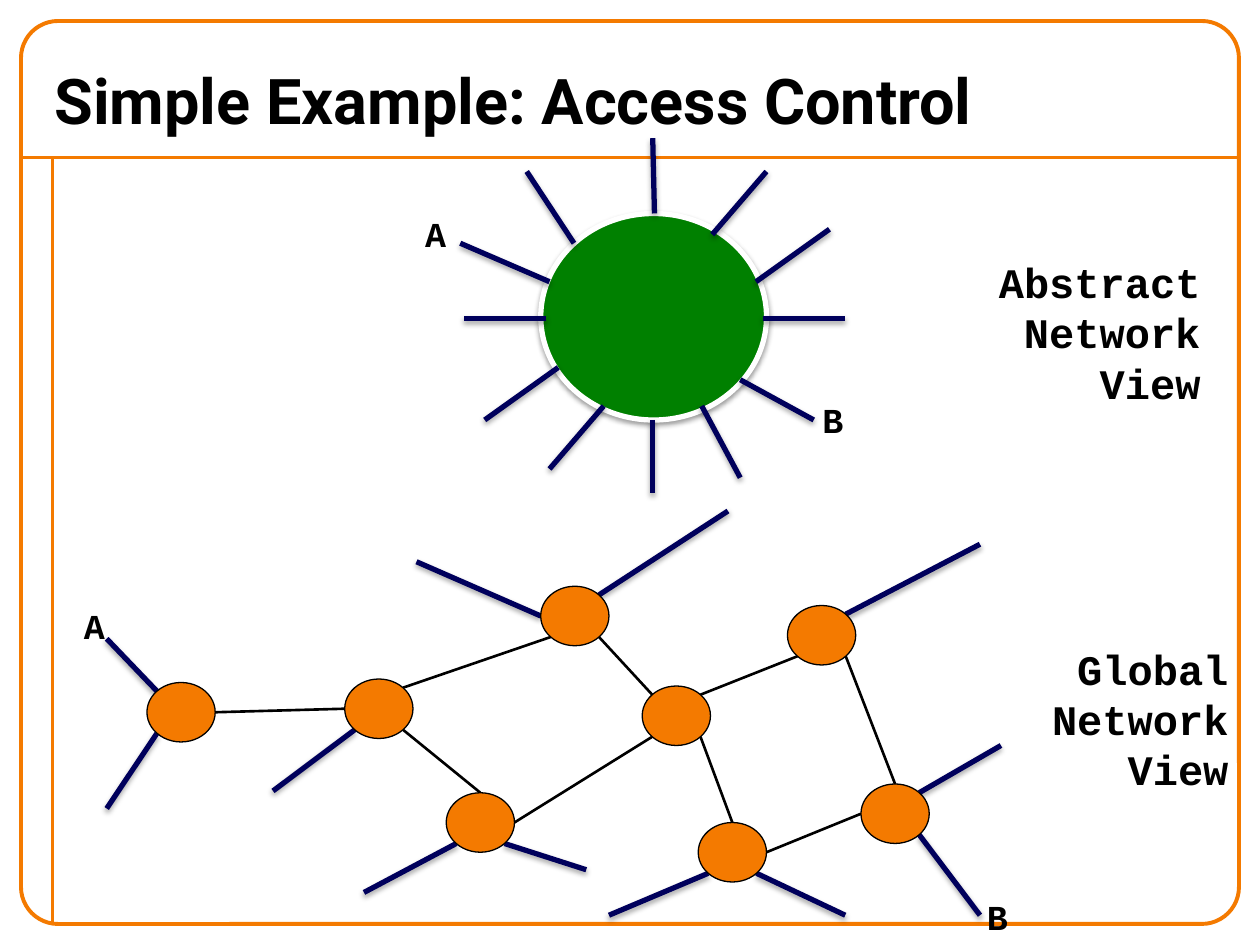
from dataclasses import dataclass
from math import cos, radians, sin

from lxml.etree import SubElement
from pptx import Presentation
from pptx.dml.color import RGBColor
from pptx.enum.shapes import MSO_CONNECTOR, MSO_SHAPE
from pptx.enum.text import MSO_ANCHOR, MSO_AUTO_SIZE, PP_ALIGN
from pptx.oxml.ns import qn
from pptx.util import Pt


@dataclass(frozen=True)
class Theme:
    orange: str = "F47A00"
    navy: str = "00005C"
    green: str = "008000"
    black: str = "000000"
    white: str = "FFFFFF"
    title_font: str = "Roboto"
    body_font: str = "Courier New"
    title_size: int = 36
    caption_size: int = 24
    label_size: int = 20


T = Theme()
NODE_W, NODE_H = 39, 34
LABEL_W, LABEL_H = 27, 32
ANGLES = {"E": 0, "SE": 45, "S": 90, "SW": 135,
          "W": 180, "NW": 225, "N": 270, "NE": 315}


def rgb(color):
    return RGBColor.from_string(color)


def add_effects(sp, shadow=None):
    """Replace theme effects with none, or with a soft shadow of given opacity."""
    effects = SubElement(sp._element.spPr, qn("a:effectLst"))
    if shadow:
        outer = SubElement(effects, qn("a:outerShdw"), blurRad=str(Pt(3.1)),
                           dist=str(Pt(1.7)), dir="5400000", rotWithShape="0")
        clr = SubElement(outer, qn("a:srgbClr"), val=T.black)
        SubElement(clr, qn("a:alpha"), val=str(shadow * 1000))


def add_line(shapes, start, end, color, width, shadow=None):
    sp = shapes.add_connector(MSO_CONNECTOR.STRAIGHT,
                              *(Pt(v) for v in (*start, *end)))
    sp.line.color.rgb = rgb(color)
    sp.line.width = Pt(width)
    add_effects(sp, shadow)


def add_host(shapes, start, end):
    add_line(shapes, start, end, T.navy, 3, shadow=35)


def add_box(shapes, kind, box, line, width, fill=None, shadow=None):
    sp = shapes.add_shape(kind, *(Pt(v) for v in box))
    if fill:
        sp.fill.solid()
        sp.fill.fore_color.rgb = rgb(fill)
    else:
        sp.fill.background()
    sp.line.color.rgb = rgb(line)
    sp.line.width = Pt(width)
    add_effects(sp, shadow)
    return sp


def write(tf, *lines, font=T.body_font, size=T.caption_size, align=PP_ALIGN.RIGHT):
    tf.word_wrap = True
    for i, line in enumerate(lines):
        p = tf.add_paragraph() if i else tf.paragraphs[0]
        p.alignment = align
        r = p.add_run()
        r.text = line
        r.font.name = font
        r.font.size = Pt(size)
        r.font.bold = True
        r.font.color.rgb = rgb(T.black)


def add_text(shapes, box, *lines, **fmt):
    tf = shapes.add_textbox(*(Pt(v) for v in box)).text_frame
    tf.auto_size = MSO_AUTO_SIZE.SHAPE_TO_FIT_TEXT
    write(tf, *lines, **fmt)


def add_label(shapes, point, text):
    add_text(shapes, (*point, LABEL_W, LABEL_H), text, size=T.label_size)


def build_frame(s, x, y, w, h):
    """Rounded border with a rule under the title and one down the left."""
    rule_y, rule_x = y + 78, x + 18
    add_line(s.shapes, (x, rule_y), (x + w, rule_y), T.orange, 2.25)
    add_line(s.shapes, (rule_x, rule_y), (rule_x, y + h), T.orange, 2.25)
    sp = add_box(s.shapes, MSO_SHAPE.ROUNDED_RECTANGLE, (x, y, w, h), T.orange, 2.25)
    sp.adjustments[0] = 0.041


def build_title(s, x, y, w, h):
    sp = s.shapes.title
    sp.left, sp.top, sp.width, sp.height = (Pt(v) for v in (x, y, w, h))
    sp.text_frame.vertical_anchor = MSO_ANCHOR.MIDDLE
    write(sp.text_frame, "Simple Example: Access Control",
          font=T.title_font, size=T.title_size, align=PP_ALIGN.LEFT)


def build_abstract_view(s, x, y):
    """One big switch with hosts around it."""
    def at(point):
        return x + point[0], y + point[1]

    shapes = s.shapes.add_group_shape().shapes
    add_box(shapes, MSO_SHAPE.OVAL, (*at((75, 50)), 129, 118), T.white, 3,
            fill=T.green, shadow=38)
    spokes = [  # inner end, outer end, clockwise from the top
        ((140, 50), (139, 7)), ((173, 62), (204, 26)), ((198, 89), (240, 59)),
        ((202, 110), (249, 110)), ((189, 145), (231, 168)), ((167, 160), (189, 201)),
        ((139, 168), (139, 210)), ((111, 160), (80, 196)), ((85, 138), (43, 168)),
        ((78, 110), (31, 110)), ((80, 89), (29, 67)), ((94, 67), (67, 26)),
    ]
    for inner, outer in spokes:
        add_host(shapes, at(inner), at(outer))
    add_text(shapes, (*at((297, 71)), 162, 94), "Abstract Network", "View")
    add_label(s.shapes, at((1, 46)), "A")
    add_label(s.shapes, at((228, 152)), "B")


def build_global_view(s, x, y):
    """Linked switches with hosts at the edges."""
    nodes = {1: (48, 102), 2: (161, 100), 3: (273, 47), 4: (331, 104),
             5: (219, 165), 6: (363, 182), 7: (414, 58), 8: (456, 160)}
    links = [(1, "E", 2, "W"), (2, "NE", 3, "SW"), (2, "SE", 5, "N"),
             (3, "SE", 4, "NW"), (5, "E", 4, "SW"), (4, "NE", 7, "SW"),
             (4, "SE", 6, "N"), (7, "SE", 8, "N"), (6, "E", 8, "W")]
    hosts = [(1, "NW", (25, 77)), (1, "SW", (25, 174)), (2, "SW", (120, 164)),
             (3, "W", (202, 33)), (3, "NE", (380, 4)), (5, "SW", (172, 222)),
             (5, "SE", (299, 209)), (6, "SW", (312, 235)), (6, "SE", (447, 235)),
             (7, "NE", (524, 23)), (8, "NE", (536, 138)), (8, "SE", (524, 235))]

    def at(point):
        return x + point[0], y + point[1]

    def rim(node, side):
        left, top = at(nodes[node])
        angle = radians(ANGLES[side])
        return (left + NODE_W / 2 * (1 + cos(angle)),
                top + NODE_H / 2 * (1 + sin(angle)))

    for a, side_a, b, side_b in links:
        add_line(s.shapes, rim(a, side_a), rim(b, side_b), T.black, 1.5)
    for node, side, end in hosts:
        add_host(s.shapes, rim(node, side), at(end))
    for corner in nodes.values():
        add_box(s.shapes, MSO_SHAPE.OVAL, (*at(corner), NODE_W, NODE_H),
                T.black, 0.75, fill=T.orange)
    add_text(s.shapes, (*at((541, 76)), 132, 94), "Global", "Network View")
    add_label(s.shapes, at((4, 54)), "A")
    add_label(s.shapes, at((520, 220)), "B")


def main():
    prs = Presentation()
    prs.slide_width, prs.slide_height = Pt(720), Pt(540)
    s = prs.slides.add_slide(prs.slide_layouts[5])
    build_frame(s, 12, 12, 696, 516)
    build_title(s, 24, 30, 696, 54)
    build_global_view(s, 36, 288)
    build_abstract_view(s, 234, 72)
    prs.save("out.pptx")


if __name__ == "__main__":
    main()
